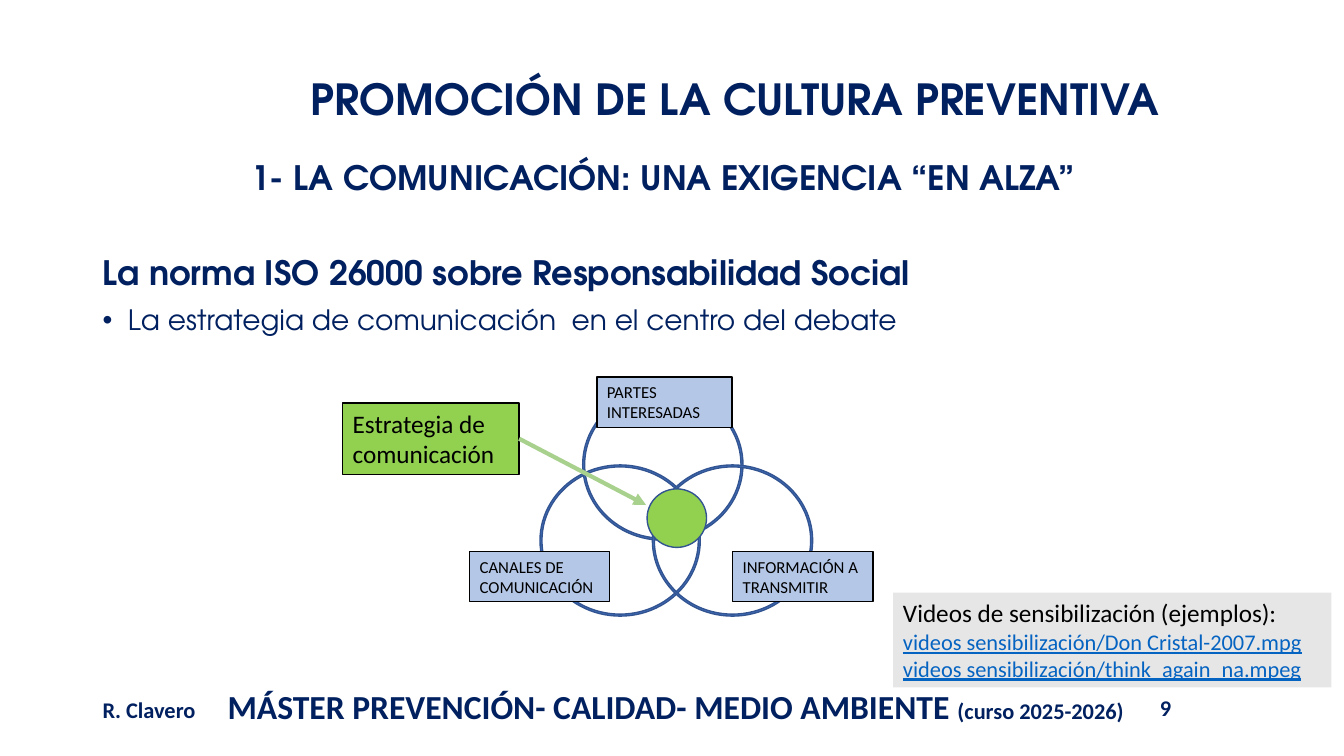
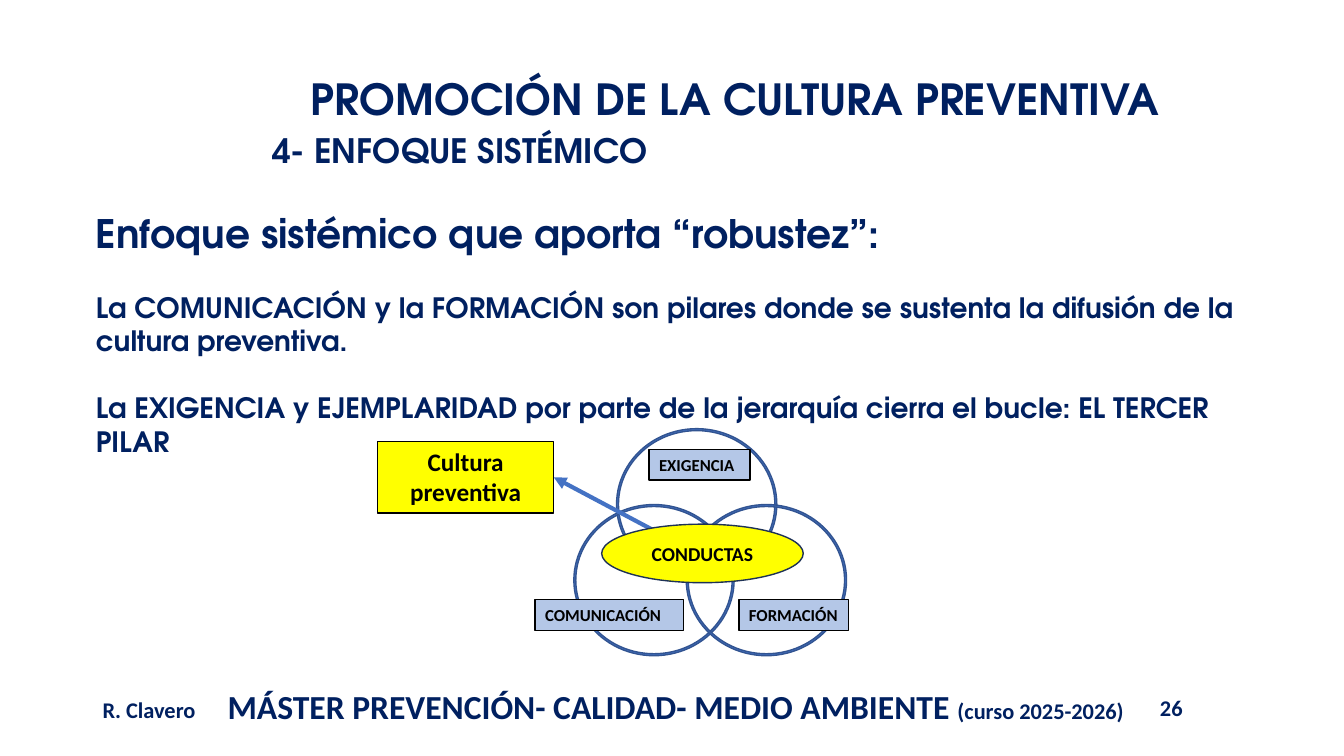
from dataclasses import dataclass

from lxml import etree
from pptx import Presentation
from pptx.dml.color import RGBColor
from pptx.enum.shapes import MSO_CONNECTOR, MSO_SHAPE
from pptx.enum.text import MSO_ANCHOR, MSO_AUTO_SIZE, PP_ALIGN
from pptx.oxml.ns import qn
from pptx.util import Pt

RECTANGLE = MSO_SHAPE.RECTANGLE
ELLIPSE = MSO_SHAPE.OVAL
CIRCLE = MSO_SHAPE.FLOWCHART_CONNECTOR
DONUT = MSO_SHAPE.DONUT
STRAIGHT = MSO_CONNECTOR.STRAIGHT
TOP, MIDDLE = MSO_ANCHOR.TOP, MSO_ANCHOR.MIDDLE
LEFT, CENTER = PP_ALIGN.LEFT, PP_ALIGN.CENTER
NO_AUTOFIT = MSO_AUTO_SIZE.NONE
RIGHT_SIDE = 3

NAVY, BLACK, LINK = "002060", "000000", "0563C1"
BLUE, BLUE_EDGE, DARK_EDGE = "4472C4", "325491", "1E3256"
PALE_BLUE, GRAY = "B4C7E7", "E7E6E6"
GREEN, PALE_GREEN, YELLOW = "92D050", "A9D18E", "FFFF00"
HEADING_FONT, TEXT_FONT = "TeX Gyre Adventor", "Calibri"

RING_SIZE = (114.5, 108)
RING_OFFSETS = ((0, 0), (-30.5, 54.2), (49.8, 54.2))
CALLOUT_SIZE = (126, 51.1)


@dataclass(frozen=True)
class Frame:
    left: float
    top: float
    width: float
    height: float

    def lengths(self):
        return Pt(self.left), Pt(self.top), Pt(self.width), Pt(self.height)


@dataclass(frozen=True)
class BodyLine:
    text: str
    size: float
    bold: bool = True
    space_before: float = 0
    line_spacing: float = 1.0
    bullet: bool = False


@dataclass(frozen=True)
class Label:
    text: str
    frame: Frame


@dataclass(frozen=True)
class Arrow:
    free_end: tuple[float, float]
    color: str
    points_to_callout: bool


@dataclass(frozen=True)
class Center:
    shape: int
    frame: Frame
    edge: str
    text: str = ""


@dataclass(frozen=True)
class Diagram:
    origin: tuple[float, float]
    callout: str
    callout_at: tuple[float, float]
    highlight: str
    callout_align: int
    bold: bool
    labels: tuple[Label, ...]
    arrow: Arrow
    center: Center


def rgb(color: str) -> RGBColor:
    return RGBColor.from_string(color)


def add_span(para, text: str, *, size: float, color: str = NAVY,
             font: str = TEXT_FONT, bold: bool = False,
             underline: bool = False) -> None:
    span = para.add_run()
    span.text = text
    span.font.size = Pt(size)
    span.font.name = font
    span.font.bold = bold
    span.font.underline = underline
    span.font.color.rgb = rgb(color)


def prepare_frame(shape, anchor=TOP):
    """Turn wrapping on and autofit off; return the first paragraph."""
    text_frame = shape.text_frame
    text_frame.word_wrap = True
    text_frame.auto_size = NO_AUTOFIT
    text_frame.vertical_anchor = anchor
    return text_frame.paragraphs[0]


def place(shape, frame: Frame) -> None:
    shape.left, shape.top, shape.width, shape.height = frame.lengths()


def add_text_box(page, frame: Frame, anchor=TOP):
    return prepare_frame(page.shapes.add_textbox(*frame.lengths()), anchor)


def add_figure(page, kind, frame: Frame, fill: str, edge: str | None = None):
    figure = page.shapes.add_shape(kind, *frame.lengths())
    figure.shadow.inherit = False
    figure.fill.solid()
    figure.fill.fore_color.rgb = rgb(fill)
    if edge:
        figure.line.color.rgb = rgb(edge)
        figure.line.width = Pt(1)
    else:
        figure.line.fill.background()
    return figure


def add_text_figure(page, kind, frame: Frame, text: str, fill: str,
                    edge: str | None, *, size: float, bold: bool = False,
                    align=LEFT, anchor=TOP):
    figure = add_figure(page, kind, frame, fill, edge)
    para = prepare_frame(figure, anchor)
    para.alignment = align
    add_span(para, text, size=size, color=BLACK, bold=bold)
    return figure


def add_page(deck, number: str):
    """Add a slide with the course heading and the footer."""
    page = deck.slides.add_slide(deck.slide_layouts[1])
    add_span(add_text_box(page, Frame(66.2, 493.9, 98.6, 28.8)),
             "R. Clavero", size=16, bold=True)
    course = add_text_box(page, Frame(155.5, 486.7, 655.2, 28.8))
    add_span(course, "MÁSTER PREVENCIÓN- CALIDAD- MEDIO AMBIENTE ",
             size=24, bold=True)
    add_span(course, "(curso 2025-2026)", size=16, bold=True)
    add_span(add_text_box(page, Frame(821.5, 492.5, 72, 27.4)),
             number, size=16, bold=True)
    heading = add_text_box(page, Frame(155.5, 51.8, 738.7, 43.9), MIDDLE)
    heading.alignment = CENTER
    heading.line_spacing = 0.8
    add_span(heading, "PROMOCIÓN DE LA CULTURA PREVENTIVA",
             size=30.6, font=HEADING_FONT, bold=True)
    return page


def fill_title(page, text: str, frame: Frame) -> None:
    title = page.shapes.title
    place(title, frame)
    para = prepare_frame(title, MIDDLE)
    text_frame = title.text_frame
    text_frame.margin_left = text_frame.margin_right = Pt(6.5)
    text_frame.margin_top = text_frame.margin_bottom = Pt(2.9)
    para.alignment = LEFT
    para.line_spacing = 0.9
    add_span(para, text, size=24, font=HEADING_FONT, bold=True)


def set_bullet(para, bullet: bool) -> None:
    properties = para._p.get_or_add_pPr()
    indent = Pt(18) if bullet else 0
    properties.set("marL", str(indent))
    properties.set("indent", str(-indent))
    if bullet:
        etree.SubElement(properties, qn("a:buChar")).set("char", "•")
    else:
        etree.SubElement(properties, qn("a:buNone"))


def fill_body(page, frame: Frame, lines: tuple[BodyLine, ...]) -> None:
    body = page.placeholders[1]
    place(body, frame)
    para = prepare_frame(body)
    for index, line in enumerate(lines):
        if index:
            para = body.text_frame.add_paragraph()
        set_bullet(para, line.bullet)
        para.alignment = LEFT
        para.space_before = Pt(line.space_before)
        para.line_spacing = line.line_spacing
        add_span(para, line.text, size=line.size, font=HEADING_FONT,
                 bold=line.bold)


def add_arrow(page, arrow: Arrow, callout) -> None:
    """Join the free end and the right side of the callout."""
    free_x, free_y = (Pt(value) for value in arrow.free_end)
    connector = page.shapes.add_connector(
        STRAIGHT, free_x, free_y, free_x, free_y)
    if arrow.points_to_callout:
        connector.end_connect(callout, RIGHT_SIDE)
    else:
        connector.begin_connect(callout, RIGHT_SIDE)
    connector.line.color.rgb = rgb(arrow.color)
    connector.line.width = Pt(3)
    line = connector.line._get_or_add_ln()
    etree.SubElement(line, qn("a:tailEnd")).set("type", "triangle")
    etree.SubElement(connector._element.spPr, qn("a:effectLst"))


def draw_diagram(page, diagram: Diagram) -> None:
    left, top = diagram.origin
    for across, down in RING_OFFSETS:
        frame = Frame(left + across, top + down, *RING_SIZE)
        ring = add_figure(page, DONUT, frame, BLUE, BLUE_EDGE)
        ring.adjustments[0] = 0.013
    callout = add_text_figure(
        page, RECTANGLE, Frame(*diagram.callout_at, *CALLOUT_SIZE),
        diagram.callout, diagram.highlight, BLACK, size=18,
        bold=diagram.bold, align=diagram.callout_align)
    for label in diagram.labels:
        add_text_figure(page, RECTANGLE, label.frame, label.text, PALE_BLUE,
                        BLACK, size=12, bold=diagram.bold)
    add_arrow(page, diagram.arrow, callout)
    center = diagram.center
    if center.text:
        add_text_figure(page, center.shape, center.frame, center.text,
                        diagram.highlight, center.edge, size=14, bold=True,
                        align=CENTER, anchor=MIDDLE)
    else:
        add_figure(page, center.shape, center.frame, diagram.highlight,
                   center.edge)


def build_communication(deck) -> None:
    page = add_page(deck, "9")
    fill_title(page, "1- LA COMUNICACIÓN: UNA EXIGENCIA “EN ALZA”",
               Frame(172.8, 110.9, 750.2, 34.6))
    fill_body(page, Frame(66.2, 179.3, 828, 288.7), (
        BodyLine("La norma ISO 26000 sobre Responsabilidad Social", 24,
                 line_spacing=0.9),
        BodyLine("La estrategia de comunicación  en el centro del debate", 20,
                 bold=False, space_before=10, line_spacing=0.9, bullet=True),
    ))
    draw_diagram(page, Diagram(
        origin=(416.2, 277.9), callout="Estrategia de comunicación",
        callout_at=(244.8, 287.8), highlight=GREEN, callout_align=LEFT,
        bold=False,
        labels=(
            Label("PARTES INTERESADAS", Frame(426.4, 269.3, 96.5, 36)),
            Label("INFORMACIÓN A TRANSMITIR", Frame(523.4, 393.8, 100.1, 36)),
            Label("CANALES DE COMUNICACIÓN", Frame(335.5, 393.8, 100.1, 36)),
        ),
        arrow=Arrow((461.5, 360.7), PALE_GREEN, points_to_callout=False),
        center=Center(CIRCLE, Frame(462.2, 349.2, 42.5, 41.8), BLUE_EDGE)))
    videos = add_text_figure(
        page, RECTANGLE, Frame(637.9, 423.4, 313.2, 67.7),
        "Videos de sensibilización (ejemplos):", GRAY, None, size=18)
    for file_name in ("Don Cristal-2007.mpg", "think_again_na.mpeg"):
        para = videos.text_frame.add_paragraph()
        para.alignment = LEFT
        add_span(para, f"videos sensibilización/{file_name}", size=16,
                 color=LINK, underline=True)


def build_systemic_approach(deck) -> None:
    page = add_page(deck, "26")
    fill_title(page, "4- ENFOQUE SISTÉMICO", Frame(187.9, 91.4, 736.6, 34.6))
    fill_body(page, Frame(61.2, 146, 847.4, 335), (
        BodyLine("Enfoque sistémico que aporta “robustez”:", 28),
        BodyLine("La COMUNICACIÓN y la FORMACIÓN son pilares donde se "
                 "sustenta la difusión de la cultura preventiva.", 20,
                 space_before=24),
        BodyLine("La EXIGENCIA y EJEMPLARIDAD por parte de la jerarquía "
                 "cierra el bucle: EL TERCER PILAR", 20, space_before=24),
    ))
    draw_diagram(page, Diagram(
        origin=(440.4, 306.2), callout="Cultura preventiva",
        callout_at=(269.6, 315.4), highlight=YELLOW, callout_align=CENTER,
        bold=True,
        labels=(
            Label("EXIGENCIA", Frame(463.7, 321.1, 72, 21.8)),
            Label("FORMACIÓN", Frame(527.8, 428.4, 78.5, 21.8)),
            Label("COMUNICACIÓN", Frame(382.3, 428.4, 105.8, 21.8)),
        ),
        arrow=Arrow((480.2, 385.9), BLUE, points_to_callout=True),
        center=Center(ELLIPSE, Frame(429.8, 374.4, 144, 41.8), DARK_EDGE,
                      "CONDUCTAS")))


def main() -> None:
    deck = Presentation()
    deck.slide_width, deck.slide_height = Pt(960), Pt(540)
    build_communication(deck)
    build_systemic_approach(deck)
    deck.save("out.pptx")


if __name__ == "__main__":
    main()
